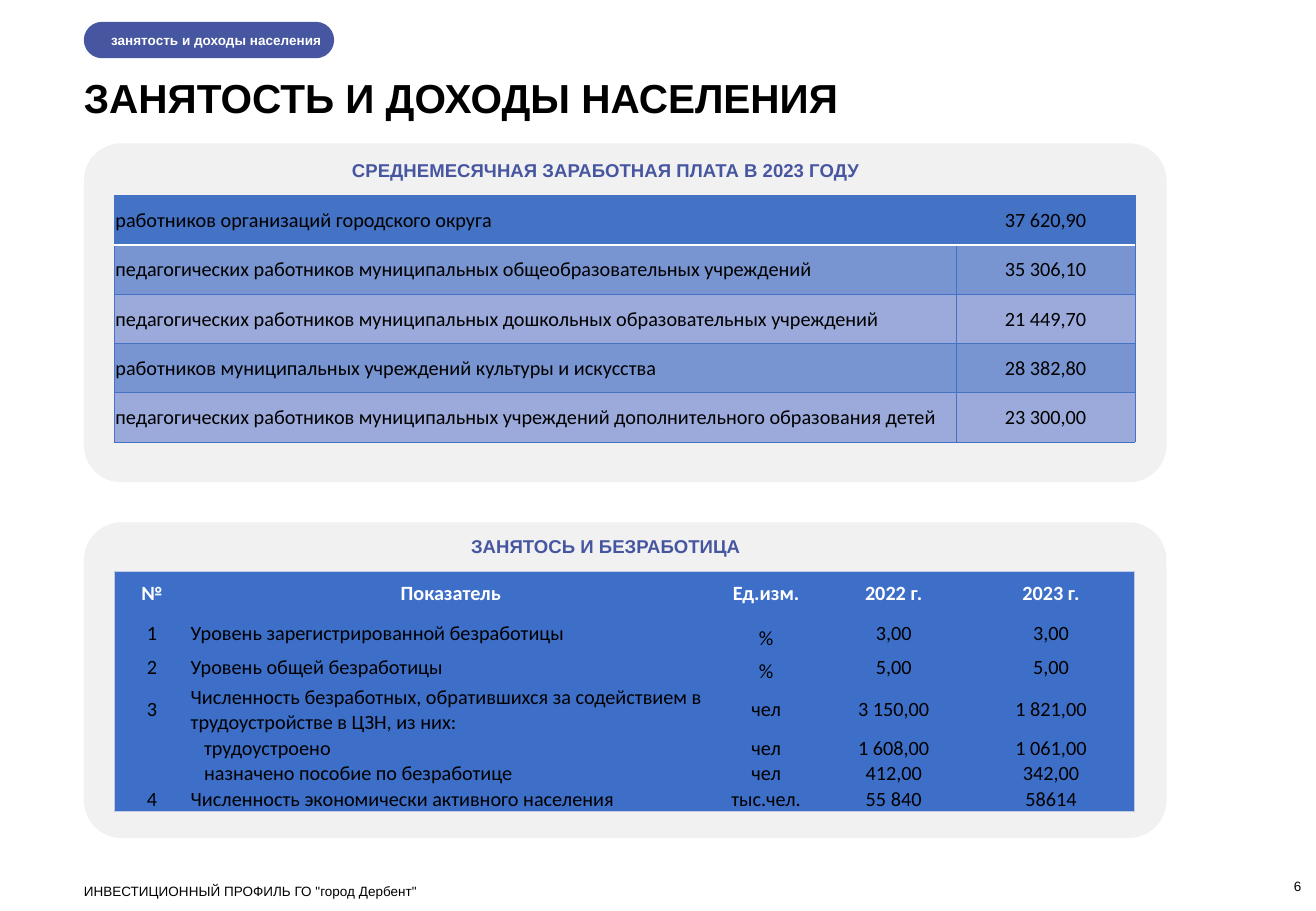
from lxml import etree
from pptx import Presentation, util as u
from pptx.dml.color import RGBColor
from pptx.enum import shapes, text
from pptx.oxml.ns import qn

INDIGO = RGBColor(0x47, 0x56, 0xA0)
PANEL = RGBColor(0xF1, 0xF1, 0xF1)
BLUE = RGBColor(0x44, 0x72, 0xC4)
BAND_DARK = RGBColor(0x78, 0x94, 0xD1)
BAND_LIGHT = RGBColor(0x9B, 0xAA, 0xDA)
JOBS_BLUE = RGBColor(0x3D, 0x6F, 0xC9)
PALE_LINE = RGBColor(0xC1, 0xC9, 0xE4)
WHITE = RGBColor(0xFF, 0xFF, 0xFF)
BLACK = RGBColor(0, 0, 0)
LEFT, CENTER, RIGHT = text.PP_ALIGN.LEFT, text.PP_ALIGN.CENTER, text.PP_ALIGN.RIGHT
TOP, MIDDLE, BOTTOM = text.MSO_ANCHOR.TOP, text.MSO_ANCHOR.MIDDLE, text.MSO_ANCHOR.BOTTOM
NO_STYLE = "{2D5ABB26-0587-4C30-8999-92F81FD0307C}"

MARGIN = 0.69
PANEL_W = 8.91
TABLE_X = MARGIN + 0.25
HEADING_X, HEADING_W = 2.54, 4.89


def write(tf, words, size, color=BLACK, bold=False, align=LEFT, font="Arial"):
    p = tf.paragraphs[0]
    p.alignment = align
    r = p.add_run()
    r.text = words
    r.font.name, r.font.size, r.font.bold = font, u.Pt(size), bold
    r.font.color.rgb = color


def add_grid(top, widths, heights, rows, fills, line, inner):
    """Add a table; inner rules every cell and sets a white line under the header."""
    frame = s.shapes.add_table(len(rows), len(widths), u.Inches(TABLE_X), u.Inches(top),
                               u.Inches(sum(widths)), u.Inches(sum(heights)))
    table = frame.table
    table._tbl.tblPr.find(qn("a:tableStyleId")).text = NO_STYLE
    for column, width in zip(table.columns, widths):
        column.width = u.Inches(width)
    last_row, last_col = len(rows) - 1, len(widths) - 1
    for i, row in enumerate(rows):
        table.rows[i].height = u.Inches(heights[i])
        for j, words in enumerate(row):
            cell = table.cell(i, j)
            cell.margin_left = cell.margin_right = cell.margin_top = u.Inches(0.01)
            cell.margin_bottom = 0
            cell.vertical_anchor = BOTTOM if words in ("%", "58614") else MIDDLE
            cell.fill.solid()
            cell.fill.fore_color.rgb = fills[i]
            if words:
                header = i == 0 and not inner
                is_label = len(words) > 12
                write(cell.text_frame, words, 12, WHITE if header else BLACK, header,
                      LEFT if is_label else CENTER, "Calibri")
            else:
                cell.text_frame.paragraphs[0]._p.get_or_add_endParaRPr().set("sz", "1200")
            edges = {"a:lnL": j == 0, "a:lnR": j == last_col,
                     "a:lnT": i == 0, "a:lnB": i == last_row}
            tcPr = cell._tc.get_or_add_tcPr()
            drawn = [edge for edge, outer in edges.items() if outer or inner]
            for position, edge in enumerate(drawn):
                under_header = inner and (i, edge) in ((0, "a:lnB"), (1, "a:lnT"))
                ln = etree.Element(qn(edge), w=str(u.Pt(1 if under_header else 0.5)))
                solid = etree.SubElement(ln, qn("a:solidFill"))
                etree.SubElement(solid, qn("a:srgbClr"), val=str(WHITE if under_header else line))
                tcPr.insert(position, ln)
    return table


prs = Presentation()
prs.slide_width, prs.slide_height = u.Inches(10.83), u.Inches(7.5)
s = prs.slides.add_slide(prs.slide_layouts[6])

# Panels and section tag
for top, width, height, radius, color in (
    (1.18, PANEL_W, 2.79, 0.11, PANEL),
    (4.3, PANEL_W, 2.6, 0.12, PANEL),
    (0.18, 2.06, 0.3, 0.5, INDIGO),
):
    sp = s.shapes.add_shape(shapes.MSO_SHAPE.ROUNDED_RECTANGLE, u.Inches(MARGIN),
                            u.Inches(top), u.Inches(width), u.Inches(height))
    sp.adjustments[0] = radius
    sp.shadow.inherit = False
    sp.fill.solid()
    sp.fill.fore_color.rgb = color
    sp.line.fill.background()

tag = sp.text_frame
tag.margin_left = u.Inches(0.12)
tag.margin_right = tag.margin_top = tag.margin_bottom = 0
tag.vertical_anchor = MIDDLE
write(tag, "занятость и доходы населения", 8, WHITE, True, CENTER)

# Title, headings, footer and page number
for x, y, w, h, words, size, color, bold, align, anchor in (
    (MARGIN, 0.6, 10.02, 0.4, "ЗАНЯТОСТЬ И ДОХОДЫ НАСЕЛЕНИЯ", 24, BLACK, True, LEFT, TOP),
    (HEADING_X, 1.31, HEADING_W, 0.19, "СРЕДНЕМЕСЯЧНАЯ ЗАРАБОТНАЯ ПЛАТА В 2023 ГОДУ",
     11, INDIGO, True, CENTER, TOP),
    (HEADING_X, 4.4, HEADING_W, 0.19, "ЗАНЯТОСЬ И БЕЗРАБОТИЦА", 11, INDIGO, True, CENTER, TOP),
    (MARGIN, 7.27, 8, 0.13, 'ИНВЕСТИЦИОННЫЙ ПРОФИЛЬ ГО "город Дербент"',
     8, BLACK, False, LEFT, TOP),
    (9.91, 7.23, 0.8, 0.13, "6", 8, BLACK, False, RIGHT, BOTTOM),
):
    tf = s.shapes.add_textbox(u.Inches(x), u.Inches(y), u.Inches(w), u.Inches(h)).text_frame
    tf.word_wrap = True
    tf.margin_left = tf.margin_right = tf.margin_top = tf.margin_bottom = 0
    tf.vertical_anchor = anchor
    write(tf, words, size, color, bold, align)

wages = [
    ("работников организаций городского округа", "37 620,90"),
    ("педагогических работников муниципальных общеобразовательных учреждений", "35 306,10"),
    ("педагогических работников муниципальных дошкольных образовательных учреждений", "21 449,70"),
    ("работников муниципальных учреждений культуры и искусства", "28 382,80"),
    ("педагогических работников муниципальных учреждений дополнительного образования детей",
     "23 300,00"),
]
add_grid(1.61, [6.93, 1.47], [2.03 / len(wages)] * len(wages), wages,
         [BLUE] + [BAND_DARK, BAND_LIGHT] * 2, BLUE, inner=True)

jobs = [
    ("№", "Показатель", "Ед.изм.", "2022 г.", "2023 г."),
    ("1", "Уровень зарегистрированной безработицы", "%", "3,00", "3,00"),
    ("2", "Уровень общей безработицы", "%", "5,00", "5,00"),
    ("3", "Численность безработных, обратившихся за содействием в трудоустройстве в ЦЗН, из них:",
     "чел", "3 150,00", "1 821,00"),
    ("", "трудоустроено", "чел", "1 608,00", "1 061,00"),
    ("", "назначено пособие по безработице", "чел", "412,00", "342,00"),
    ("4", "Численность экономически активного населения", "тыс.чел.", "55 840", "58614"),
]
jobs_table = add_grid(4.7, [0.62, 4.3, 0.89, 1.21, 1.38],
                      [0.36, 0.3, 0.27, 0.42, 0.21, 0.21, 0.21], jobs,
                      [JOBS_BLUE] * len(jobs), PALE_LINE, inner=False)
for i, row in enumerate(jobs):
    if not row[0]:
        jobs_table.cell(i, 1).margin_left = u.Inches(0.12)

prs.save("out.pptx")
